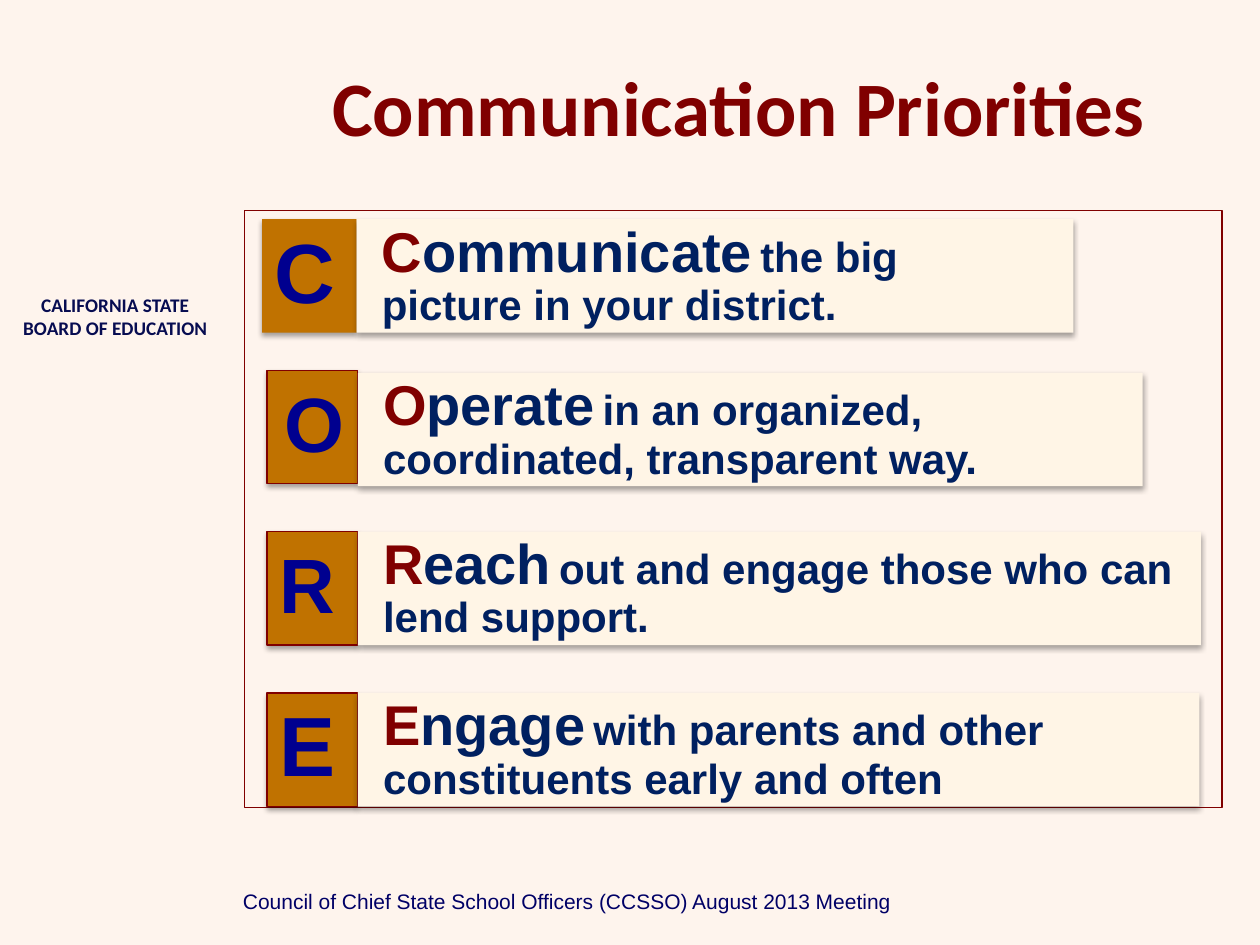
from lxml import etree
from pptx import Presentation, util as u
from pptx.dml.color import RGBColor
from pptx.enum import shapes, text
from pptx.oxml import ns

CREAM = RGBColor(0xFE, 0xF4, 0xED)
PANEL = RGBColor(0xFF, 0xF5, 0xE6)
OCHRE = RGBColor(0xC0, 0x72, 0x00)
MAROON = RGBColor(0x80, 0x00, 0x00)
BLUE = RGBColor(0x00, 0x00, 0x8F)
NAVY = RGBColor(0x00, 0x20, 0x60)
BOARD_BLUE = RGBColor(0x07, 0x0C, 0x51)
FOOTER_BLUE = RGBColor(0x00, 0x00, 0x66)

TITLE = "Communication Priorities"
BOARD = "CALIFORNIA STATE BOARD OF EDUCATION"
FOOTER = "Council of Chief State School Officers (CCSSO) August 2013 Meeting"

PRIORITIES = [
    dict(letter="C", rest="ommunicate", detail="the big picture in your district.",
         size=48, left=2.08, top=1.74, split=2.83, right=8.52, inset=0.02, line=None),
    dict(letter="O", rest="perate", detail="in an organized, coordinated, transparent way.",
         size=44, left=2.12, top=2.94, split=2.84, right=9.07, inset=0.13, line=MAROON, drop=0.02),
    dict(letter="R", rest="each", detail="out and engage those who can lend support.",
         size=44, left=2.12, top=4.22, split=2.84, right=9.53, inset=0.02, line=MAROON),
    dict(letter="E", rest="ngage", detail="with parents and other constituents early and often",
         size=48, left=2.12, top=5.5, split=2.84, right=9.52, inset=0.02, line=MAROON),
]
ROW_HEIGHT = 0.9


def write(sp, runs, font, align, anchor, insets, spacing=None, bold=True):
    tf = sp.text_frame
    tf.word_wrap = True
    tf.vertical_anchor = anchor
    tf.margin_left, tf.margin_top, tf.margin_right, tf.margin_bottom = map(u.Inches, insets)
    p = tf.paragraphs[0]
    p.alignment = align
    if spacing:
        p.line_spacing = spacing
    for words, size, color in runs:
        r = p.add_run()
        r.text = words
        r.font.name = font
        r.font.size = u.Pt(size)
        r.font.bold = bold
        r.font.color.rgb = color


def add_box(parent, left, top, width, height, fill=None, line=None):
    sp = parent.add_shape(shapes.MSO_SHAPE.RECTANGLE, *map(u.Inches, (left, top, width, height)))
    sp.shadow.inherit = False
    if fill is None:
        sp.fill.background()
    else:
        sp.fill.solid()
        sp.fill.fore_color.rgb = fill
    if line is None:
        sp.line.fill.background()
    else:
        sp.line.color.rgb = line
        sp.line.width = u.Pt(0.75)
    return sp


def add_shadow(sp):
    effects = sp._element.spPr.find(ns.qn("a:effectLst"))
    shadow = etree.SubElement(effects, ns.qn("a:outerShdw"), blurRad=str(u.Pt(3.1)),
                              dist=str(u.Pt(1.8)), dir="5400000", rotWithShape="0")
    color = etree.SubElement(shadow, ns.qn("a:srgbClr"), val="000000")
    etree.SubElement(color, ns.qn("a:alpha"), val="35000")


def add_priority(parent, row):
    tile = add_box(parent, row["left"], row["top"], row["split"] - row["left"],
                   ROW_HEIGHT, OCHRE, row["line"])
    add_shadow(tile)
    write(tile, [(row["letter"], row["size"], BLUE)], "Arial", text.PP_ALIGN.CENTER,
          text.MSO_ANCHOR.MIDDLE, (row["inset"], 0.02, 0.1, 0.02), 0.9)
    panel = add_box(parent, row["split"], row["top"] + row.get("drop", 0),
                    row["right"] - row["split"], ROW_HEIGHT, PANEL)
    add_shadow(panel)
    runs = [(row["letter"], 32, MAROON), (row["rest"], 32, NAVY),
            (" ", 16, NAVY), (row["detail"], 24, NAVY)]
    write(panel, runs, "Arial", text.PP_ALIGN.LEFT, text.MSO_ANCHOR.MIDDLE,
          (0.2, 0.06, 0.2, 0.05), 0.9)


def main():
    prs = Presentation()
    prs.slide_width, prs.slide_height = u.Inches(10), u.Inches(7.5)
    slide = prs.slides.add_slide(prs.slide_layouts[5])
    slide.background.fill.solid()
    slide.background.fill.fore_color.rgb = CREAM

    board = slide.shapes.add_textbox(*map(u.Inches, (0.08, 2.25, 1.67, 1.42)))
    write(board, [(BOARD, 11, BOARD_BLUE)], "Calibri", text.PP_ALIGN.CENTER,
          text.MSO_ANCHOR.TOP, (0.1, 0.08, 0.1, 0.05))

    group = slide.shapes.add_group_shape()
    add_box(group.shapes, 1.94, 1.67, 7.76, 4.74, line=MAROON)
    for row in PRIORITIES:
        add_priority(group.shapes, row)

    title = slide.shapes.title
    title.left, title.top, title.width, title.height = map(u.Inches, (1.99, 0.42, 7.75, 0.84))
    write(title, [(TITLE, 44, MAROON)], "Calibri", text.PP_ALIGN.CENTER,
          text.MSO_ANCHOR.TOP, (0.1, 0.05, 0.1, 0.05))

    footer = slide.shapes.add_textbox(*map(u.Inches, (1.83, 7, 6.08, 0.3)))
    write(footer, [(FOOTER, 12, FOOTER_BLUE)], "Arial", text.PP_ALIGN.LEFT,
          text.MSO_ANCHOR.TOP, (0.1, 0.05, 0.1, 0.05), bold=False)

    prs.save("out.pptx")


if __name__ == "__main__":
    main()
